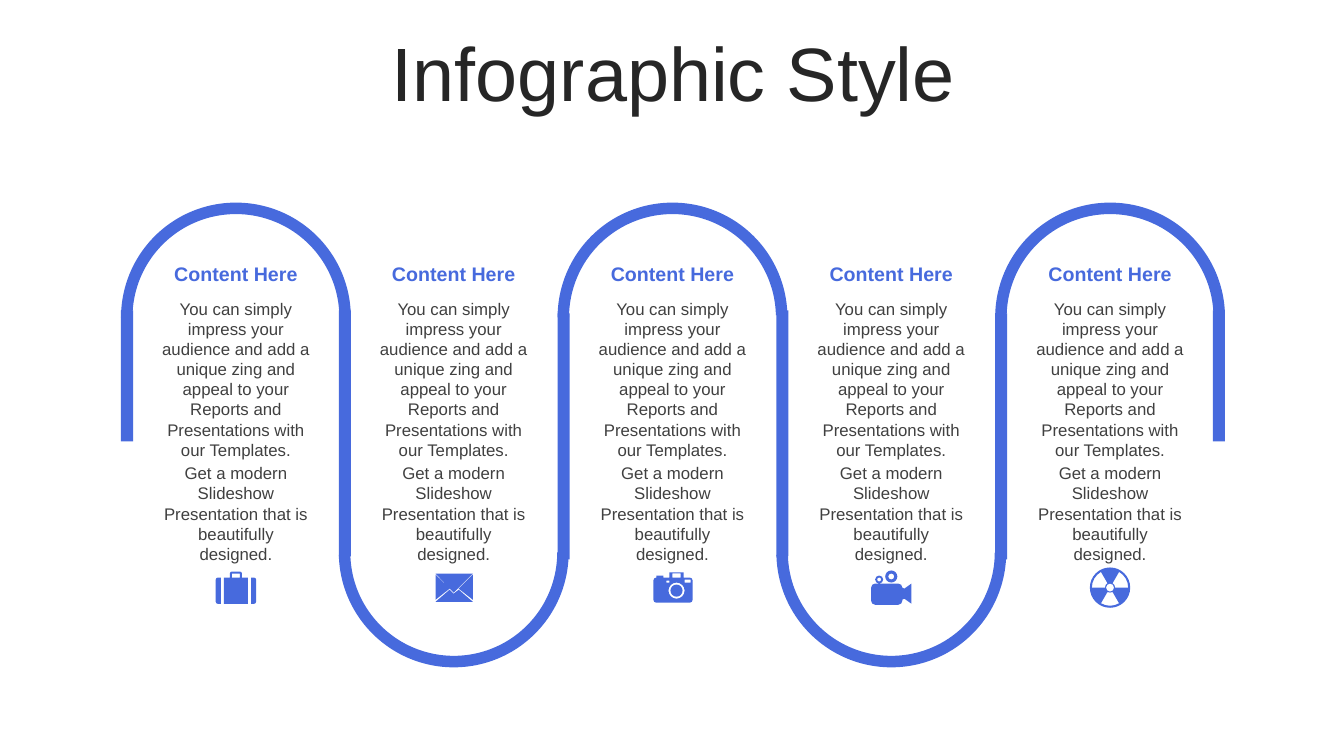
from math import ceil, cos, radians, sin, tan

from lxml import etree
from pptx import Presentation
from pptx.dml.color import RGBColor
from pptx.enum.shapes import MSO_SHAPE
from pptx.enum.text import MSO_ANCHOR, MSO_AUTO_SIZE, PP_ALIGN
from pptx.oxml.ns import qn
from pptx.util import Pt

PX = 9144  # EMU in one px, 100 px to the inch
BLUE = RGBColor(0x47, 0x6A, 0xDD)
DARK = RGBColor(0x26, 0x26, 0x26)
GRAY = RGBColor(0x40, 0x40, 0x40)
CENTER = PP_ALIGN.CENTER
TOP, MIDDLE = MSO_ANCHOR.TOP, MSO_ANCHOR.MIDDLE
FIXED, GROW = MSO_AUTO_SIZE.NONE, MSO_AUTO_SIZE.SHAPE_TO_FIT_TEXT
ARC, BAR = MSO_SHAPE.BLOCK_ARC, MSO_SHAPE.RECTANGLE

COLUMNS = 5
ARC_SIZE, BAR_WIDTH = 228, 12
ICON_Y = 583
# Left edges of the bars: four columns span 867 px
EDGES = [120 + 867 * edge // 4 for edge in range(COLUMNS + 1)]

HEADING = ["Content Here"]
BODY = [
    "You can simply impress your audience and add a unique zing and "
    "appeal to your Reports and Presentations with our Templates.",
    "Get a modern Slideshow Presentation that is beautifully designed.",
]


def arc(x, y, radius, start=0, end=360):
    """Start point of an arc, then one six-number Bézier step per quarter."""
    count = ceil(abs(end - start) / 90)
    sweep = radians(end - start) / count
    pull = 4 / 3 * tan(sweep / 4)
    steps = [(x + radius * cos(radians(start)), y + radius * sin(radians(start)))]
    for k in range(count):
        a = radians(start) + k * sweep
        b = a + sweep
        steps.append((x + radius * (cos(a) - pull * sin(a)),
                      y + radius * (sin(a) + pull * cos(a)),
                      x + radius * (cos(b) + pull * sin(b)),
                      y + radius * (sin(b) - pull * cos(b)),
                      x + radius * cos(b), y + radius * sin(b)))
    return steps


def block(left, top, right, bottom):
    """Corners of a rectangle."""
    return [(left, top), (right, top), (right, bottom), (left, bottom)]


# Icon outlines, in px from the icon centre; inner outlines are holes
SUITCASE = [
    arc(18, -8, 2, 270, 360) + arc(18, 14, 2, 0, 90) + [(15, 16), (15, -10)],
    arc(-18, 14, 2, 90, 180) + arc(-18, -8, 2, 180, 270) + [(-15, -10), (-15, 16)],
    [(12, -10), (12, 16), (-12, 16), (-12, -10), (-6, -10)]
    + arc(-4, -14, 2, 180, 270) + arc(4, -14, 2, 270, 360) + [(6, -10)],
    block(-4, -14, 4, -10),
]
ENVELOPE = [
    [(5, 2), (19, 14), (-18, 14), (-4, 2), (0, 6)],
    [(19, -13), (19, 12), (5, 1)],
    [(-18, -13), (-4, 1), (-18, 12)],
    [(-18, -14), (19, -14), (0, 5)],
]
CAMERA = [
    [(-3, -15), (11, -15), (11, -10)]
    + arc(17, -7, 3, 270, 360) + arc(17, 12, 3, 0, 90)
    + arc(-16, 12, 3, 90, 180) + arc(-16, -7, 3, 180, 270)
    + [(-16, -12), (-9, -12), (-9, -10), (-3, -10)],
    arc(4, 3, 8),
    arc(4, 3, 6),
    block(-6, -7, -3, -5),
    block(12, -8, 18, -5),
    block(0, -14, 8, -10),
]
FILM_CAMERA = [
    arc(7, 0, 4, 270, 360) + [(13, 1), (20, -4), (20, 16), (13, 11), (11, 12)]
    + arc(7, 13, 4, 0, 90) + arc(-16, 13, 4, 90, 180) + arc(-16, 0, 4, 180, 270),
    arc(0, -11, 6),
    arc(0, -11, 3),
    arc(-12, -8, 4),
    arc(-12, -8, 2),
]
RADIATION = [arc(0, 0, 20), arc(0, 0, 4)] + [
    arc(0, 0, 18, start, start + 60) + arc(0, 0, 5, start + 60, start)
    for start in (60, 180, 300)
]
ICONS = [SUITCASE, ENVELOPE, CAMERA, FILM_CAMERA, RADIATION]

deck = Presentation()
deck.slide_width, deck.slide_height = 1333 * PX, 750 * PX
page = deck.slides.add_slide(deck.slide_layouts[5])
shapes = page.shapes

# Title, headings and body texts: box, place, paragraphs, formats
title = shapes.title
texts = [(title, (35, 37, 1266, 79), ["Infographic Style"],
          {"vertical_anchor": MIDDLE, "auto_size": FIXED},
          {"line_spacing": 0.9, "space_before": Pt(10)},
          {"size": Pt(54), "bold": False}, DARK)]
for edge in EDGES[:COLUMNS]:
    texts.append((shapes.add_textbox(0, 0, 0, 0), (edge + 30, 291, 168, 261), BODY,
                  {"vertical_anchor": TOP, "auto_size": FIXED},
                  {"space_before": Pt(2.4)}, {"size": Pt(12)}, GRAY))
    texts.append((shapes.add_textbox(0, 0, 0, 0), (edge + 30, 254, 168, 34), HEADING,
                  {"vertical_anchor": MIDDLE, "auto_size": GROW},
                  {}, {"size": Pt(14), "bold": True}, BLUE))

for box, place, lines, frame_format, para_format, font_format, color in texts:
    box.left, box.top, box.width, box.height = [length * PX for length in place]
    frame = box.text_frame
    frame.text = "\n".join(lines)
    for para in frame.paragraphs:
        font = para.runs[0].font
        font.color.rgb = color
        for target, values in (
            (frame, {"word_wrap": True, **frame_format}),
            (para, {"alignment": CENTER, **para_format}),
            (font, {"name": "Arial", **font_format}),
        ):
            for name, value in values.items():
                setattr(target, name, value)

blue_shapes = []

# Winding band: arcs alternate between top and bottom
for column, edge in enumerate(EDGES[:COLUMNS]):
    below = column % 2 == 1
    bend = shapes.add_shape(ARC, edge * PX, (434 if below else 201) * PX,
                            ARC_SIZE * PX, ARC_SIZE * PX)
    for index, value in enumerate((108, 215.26, 0.05)):
        bend.adjustments[index] = value
    bend.rotation = 180 if below else 0
    blue_shapes.append(bend)

# Winding band: straight bars, short at both ends
for index, edge in enumerate(EDGES):
    top = 311 if index in (2, 4) else 308
    height = 130 if index in (0, COLUMNS) else 244
    blue_shapes.append(shapes.add_shape(BAR, edge * PX, top * PX,
                                        BAR_WIDTH * PX, height * PX))

# Icons: straight outlines first, then the curved steps become Béziers
for edge, outlines in zip(EDGES, ICONS):
    origin = (edge + ARC_SIZE // 2, ICON_Y)
    contours = [[[(value + origin[k % 2]) * PX for k, value in enumerate(step)]
                 for step in outline] for outline in outlines]
    builder = shapes.build_freeform(*contours[0][0], scale=1.0)
    for number, contour in enumerate(contours):
        if number:
            builder.move_to(*contour[0])
        builder.add_line_segments([step[-2:] for step in contour[1:]], close=True)
    icon = builder.convert_to_shape()
    steps = [step for contour in contours for step in contour[1:]]
    for segment, step in zip(list(icon.element.iter(qn("a:lnTo"))), steps):
        if len(step) == 6:
            segment.tag = qn("a:cubicBezTo")
            for place in (0, 1):
                control = etree.Element(qn("a:pt"))
                control.set("x", str(round(step[2 * place] - icon.left)))
                control.set("y", str(round(step[2 * place + 1] - icon.top)))
                segment.insert(place, control)
    blue_shapes.append(icon)

for shape in blue_shapes:
    shape.shadow.inherit = False
    shape.fill.solid()
    shape.fill.fore_color.rgb = BLUE
    shape.line.fill.background()

deck.save("out.pptx")
